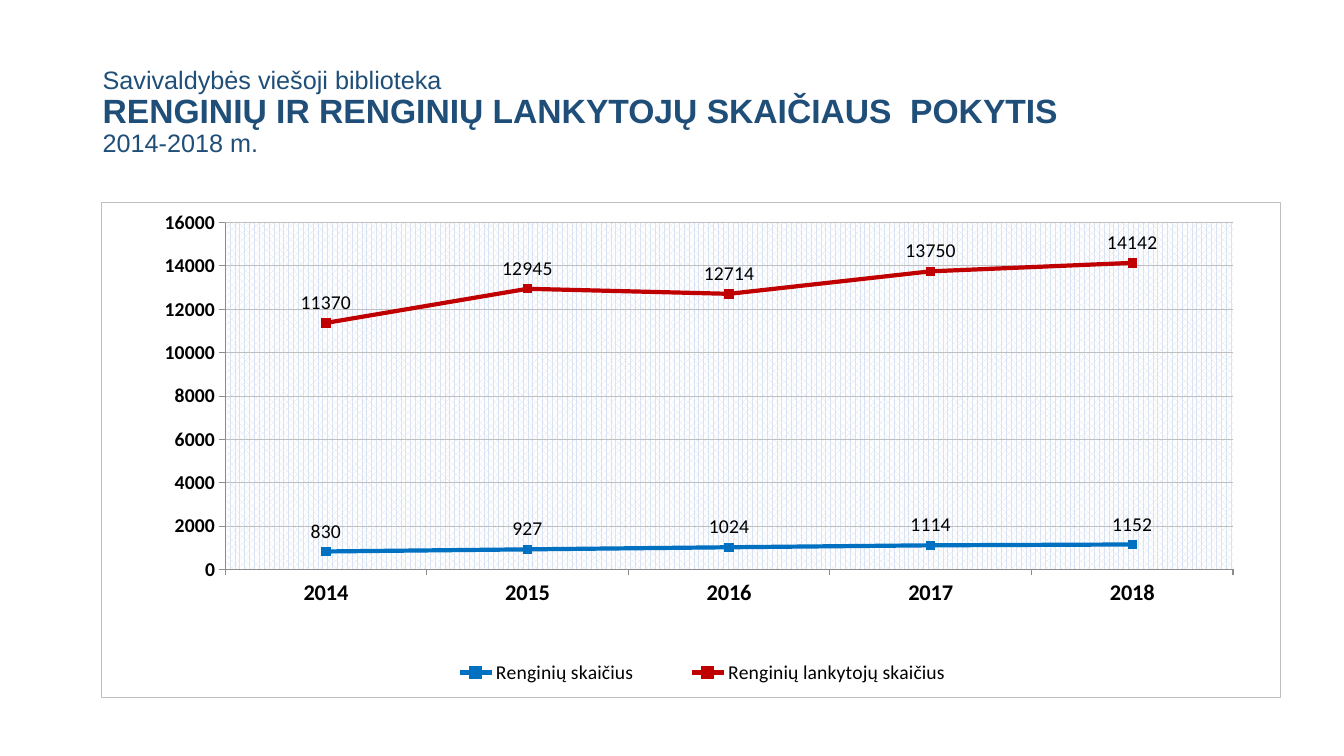
from dataclasses import dataclass

from pptx import Presentation
from pptx import util as u
from pptx.chart.chart import Chart
from pptx.chart.data import CategoryChartData
from pptx.dml.color import RGBColor
from pptx.enum import chart as ch, text
from pptx.oxml import parse_xml
from pptx.oxml.ns import nsdecls, qn
from pptx.slide import Slide

WIDTH, HEIGHT = u.Inches(13.33), u.Inches(7.5)
NAVY, BLACK, GREY = "1F4E79", "000000", "BFBFBF"


@dataclass
class Box:
    """A frame given as shares of the slide or chart size."""
    x: float
    y: float
    w: float
    h: float

    def on_slide(self) -> tuple[int, int, int, int]:
        return (int(self.x * WIDTH), int(self.y * HEIGHT),
                int(self.w * WIDTH), int(self.h * HEIGHT))


@dataclass
class TitleLine:
    words: str
    size: int
    bold: bool = False


@dataclass
class Series:
    name: str
    values: tuple[int, ...]
    color: str


TITLE_BOX = Box(0.069, 0.053, 0.863, 0.193)
CHART_BOX = Box(0.075, 0.267, 0.878, 0.656)
PLOT_BOX = Box(0.105, 0.041, 0.855, 0.701)
LEGEND_BOX = Box(0.26, 0.91, 0.5, 0.08)

TITLE = [
    TitleLine("Savivaldybės viešoji biblioteka", 18),
    TitleLine("RENGINIŲ IR RENGINIŲ LANKYTOJŲ SKAIČIAUS  POKYTIS", 24, True),
    TitleLine("2014-2018 m.", 18),
]
YEARS = [str(year) for year in range(2014, 2019)]
SERIES = [
    Series("Renginių skaičius", (830, 927, 1024, 1114, 1152), "0070C0"),
    Series("Renginių lankytojų skaičius",
           (11370, 12945, 12714, 13750, 14142), "C00000"),
]


def rgb(value: str) -> RGBColor:
    return RGBColor.from_string(value)


def style_font(font, size: int, color: str = BLACK, bold: bool = False,
               name: str = "Calibri") -> None:
    font.name, font.size, font.bold = name, u.Pt(size), bold
    font.color.rgb = rgb(color)


def style_line(line, color: str, width: float) -> None:
    line.color.rgb = rgb(color)
    line.width = u.Pt(width)


def add_title(s: Slide) -> None:
    tf = s.shapes.add_textbox(*TITLE_BOX.on_slide()).text_frame
    tf.word_wrap = True
    tf.vertical_anchor = text.MSO_ANCHOR.MIDDLE
    p = tf.paragraphs[0]
    p.line_spacing = 0.9
    for i, line in enumerate(TITLE):
        if i:
            p.add_line_break()
        r = p.add_run()
        r.text = line.words
        style_font(r.font, line.size, NAVY, line.bold, "Arial")


def layout_xml(box: Box, target: str = ""):
    return parse_xml(
        f'<c:layout {nsdecls("c")}><c:manualLayout>{target}'
        '<c:xMode val="edge"/><c:yMode val="edge"/>'
        f'<c:x val="{box.x}"/><c:y val="{box.y}"/>'
        f'<c:w val="{box.w}"/><c:h val="{box.h}"/>'
        '</c:manualLayout></c:layout>')


def set_layout(parent, index: int, layout) -> None:
    for old in parent.findall(qn("c:layout")):
        parent.remove(old)
    parent.insert(index, layout)


def style_axis(axis, size: int) -> None:
    axis.major_tick_mark = ch.XL_TICK_MARK.OUTSIDE
    axis.minor_tick_mark = ch.XL_TICK_MARK.NONE
    style_font(axis.tick_labels.font, size, bold=True)
    style_line(axis.format.line, "8C8C8C", 0.75)


def style_series(line, color: str) -> None:
    line.smooth = False
    style_line(line.format.line, color, 3)
    line.marker.style = ch.XL_MARKER_STYLE.SQUARE
    line.marker.size = 6
    line.marker.format.fill.solid()
    line.marker.format.fill.fore_color.rgb = rgb(color)
    style_line(line.marker.format.line, color, 0.75)
    labels = line.data_labels
    labels.show_value = True
    labels.position = ch.XL_LABEL_POSITION.ABOVE
    style_font(labels.font, 14)


def style_areas(chart: Chart) -> None:
    # Frame round the whole chart, with square corners
    root = chart._chartSpace
    root.find(qn("c:chart")).addnext(parse_xml(
        f'<c:spPr {nsdecls("c", "a")}><a:noFill/><a:ln w="9525"><a:solidFill>'
        f'<a:srgbClr val="{GREY}"/></a:solidFill></a:ln></c:spPr>'))
    if root.find(qn("c:roundedCorners")) is None:
        root.find(qn("c:date1904")).addnext(
            parse_xml(f'<c:roundedCorners {nsdecls("c")} val="0"/>'))

    # Patterned plot area
    plot_area = root.find(qn("c:chart")).find(qn("c:plotArea"))
    set_layout(plot_area, 0,
               layout_xml(PLOT_BOX, '<c:layoutTarget val="inner"/>'))
    plot_area.append(parse_xml(
        f'<c:spPr {nsdecls("c", "a")}><a:pattFill prst="pct70">'
        '<a:fgClr><a:srgbClr val="DAE3F3"/></a:fgClr>'
        '<a:bgClr><a:srgbClr val="FFFFFF"/></a:bgClr>'
        '</a:pattFill></c:spPr>'))


def add_line_chart(s: Slide) -> None:
    data = CategoryChartData()
    data.categories = YEARS
    for series in SERIES:
        data.add_series(series.name, series.values)
    chart = s.shapes.add_chart(ch.XL_CHART_TYPE.LINE_MARKERS,
                               *CHART_BOX.on_slide(), data).chart
    chart.has_title = False
    style_font(chart.font, 10)
    chart.plots[0].vary_by_categories = False
    for line, series in zip(chart.plots[0].series, SERIES):
        style_series(line, series.color)

    # Axes
    style_axis(chart.category_axis, 16)
    style_axis(chart.value_axis, 14)
    chart.value_axis.minimum_scale = 0
    chart.value_axis.maximum_scale = 16000
    chart.value_axis.major_unit = 2000
    style_line(chart.value_axis.major_gridlines.format.line, GREY, 0.75)

    # Legend
    chart.has_legend = True
    chart.legend.position = ch.XL_LEGEND_POSITION.BOTTOM
    chart.legend.include_in_layout = False
    style_font(chart.legend.font, 14)
    set_layout(chart.legend._element, 1, layout_xml(LEGEND_BOX))

    style_areas(chart)


def main() -> None:
    prs = Presentation()
    prs.slide_width, prs.slide_height = WIDTH, HEIGHT
    s = prs.slides.add_slide(prs.slide_layouts[6])
    add_title(s)
    add_line_chart(s)
    prs.save("out.pptx")


if __name__ == "__main__":
    main()
